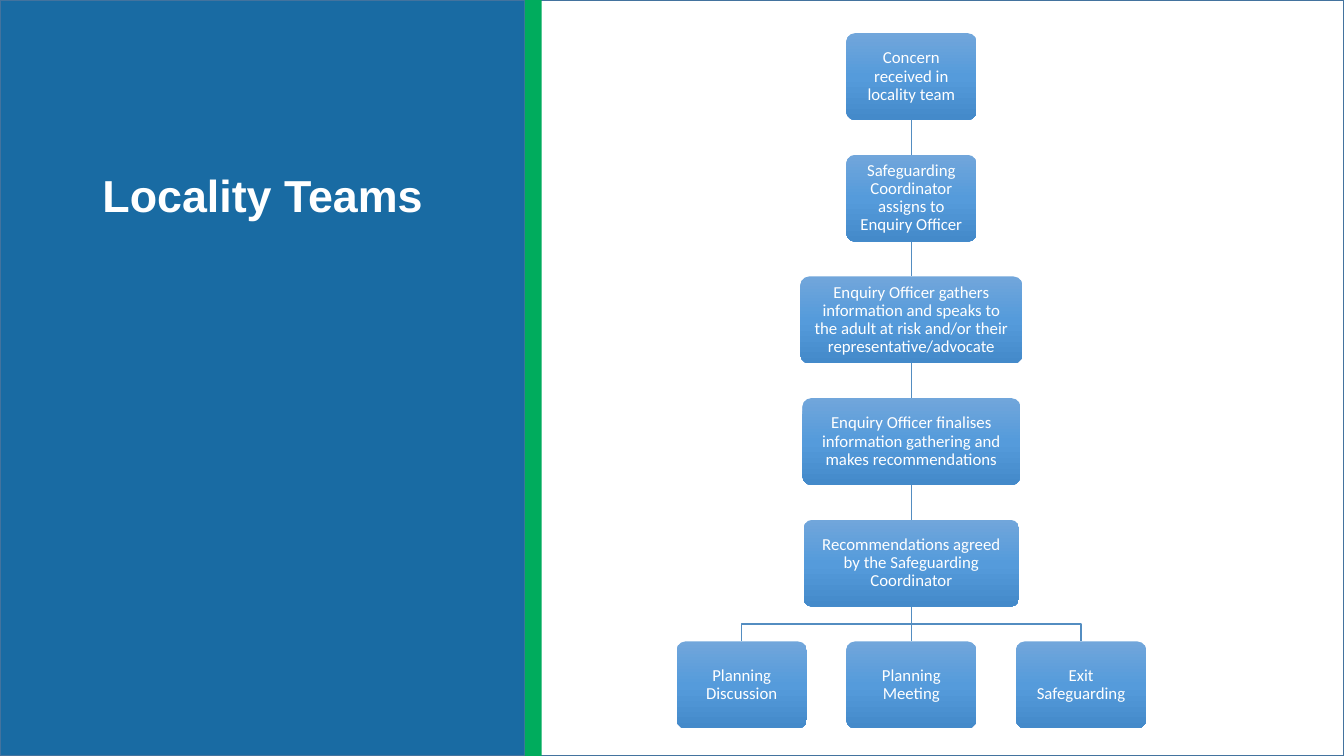
from copy import deepcopy

from lxml.etree import SubElement
from pptx import Presentation
from pptx.dml.color import RGBColor
from pptx.enum.shapes import MSO_CONNECTOR as Link, MSO_SHAPE as Shape
from pptx.enum.text import MSO_ANCHOR as Anchor, MSO_AUTO_SIZE as Fit, PP_ALIGN as Align
from pptx.oxml.ns import qn
from pptx.util import Pt

WIDE, HIGH = 960, 540
EDGE, WIRE = "43739E", "538DC1"
SHADES = [(0, "71A6DB"), (0.5, "559BDB"), (1, "448ACA")]
STEPS = [
    ("Concern received in locality team", 93),
    ("Safeguarding Coordinator assigns to Enquiry Officer", 93),
    ("Enquiry Officer gathers information and speaks to the adult at risk "
     "and/or their representative/advocate", 158.5),
    ("Enquiry Officer finalises information gathering and makes recommendations", 155.5),
    ("Recommendations agreed by the Safeguarding Coordinator", 154),
]
ENDS = ["Planning Discussion", "Planning Meeting", "Exit Safeguarding"]


def tint(code):
    """Turn a hex string into a colour."""
    return RGBColor.from_string(code)


def style(para, text, face, size, bold=False):
    """Fill a paragraph with white text."""
    para.text = text
    para.line_spacing = 0.9
    font = para.runs[0].font
    font.name, font.size, font.bold = face, Pt(size), bold
    font.color.rgb = tint("FFFFFF")


def block(slide, box, fill, edge=None):
    """Draw a plain rectangle."""
    rect = slide.shapes.add_shape(Shape.RECTANGLE, *map(Pt, box))
    rect.shadow.inherit = False
    rect.fill.solid()
    rect.fill.fore_color.rgb = tint(fill)
    if edge:
        rect.line.color.rgb = tint(edge)
        rect.line.width = Pt(1)
    else:
        rect.line.fill.background()


def side(slide, box):
    """Draw the title panel with its green band."""
    left, top, width, height = box
    block(slide, (left, top, width, height), "196BA3", EDGE)
    block(slide, (left + width, top, 12, height), "00AC5D")
    title = slide.shapes.title
    title.left, title.top = Pt(left + 66), Pt(top + 36)
    title.width, title.height = Pt(width - 66), Pt(126)
    slide.shapes._spTree.append(title._element)
    frame = title.text_frame
    frame.auto_size = Fit.NONE
    frame.vertical_anchor = Anchor.BOTTOM
    style(frame.paragraphs[0], "Locality Teams", "Arial", 32, True)
    frame.paragraphs[0].alignment = Align.LEFT


def node(slide, box, text):
    """Draw one shaded step of the flow."""
    card = slide.shapes.add_shape(Shape.ROUNDED_RECTANGLE, *map(Pt, box))
    card.adjustments[0] = 0.1
    card.shadow.inherit = False
    card.line.fill.background()
    card.fill.gradient()
    card.fill.gradient_angle = 270
    stops = card._element.spPr.find(".//" + qn("a:gsLst"))
    stops.append(deepcopy(stops[0]))
    for stop, (place, code) in zip(card.fill.gradient_stops, SHADES):
        stop.position = place
        stop.color.rgb = tint(code)
    frame = card.text_frame
    frame.word_wrap = True
    frame.vertical_anchor = Anchor.MIDDLE
    frame.margin_left = frame.margin_right = Pt(5.4)
    frame.margin_top = frame.margin_bottom = Pt(5.4)
    style(frame.paragraphs[0], text, "Calibri", 12)
    frame.paragraphs[0].alignment = Align.CENTER
    return card


def join(slide, upper, lower):
    """Link two steps that stand in one column."""
    link = slide.shapes.add_connector(Link.STRAIGHT, 0, 0, 0, 0)
    link.begin_connect(upper, 2)
    link.end_connect(lower, 0)
    link.line.color.rgb = tint(WIRE)
    link.line.width = Pt(1)
    SubElement(link._element.spPr, qn("a:effectLst"))


def branch(slide, start, end):
    """Draw a bent line from a step down to an end."""
    (x, y), (far, low) = start, end
    mid = (y + low) / 2
    form = slide.shapes.build_freeform(Pt(x), Pt(y))
    turns = [(x, mid), (far, mid), (far, low)]
    form.add_line_segments([(Pt(a), Pt(b)) for a, b in turns], close=False)
    bend = form.convert_to_shape()
    bend.shadow.inherit = False
    bend.fill.background()
    bend.line.color.rgb = tint(WIRE)
    bend.line.width = Pt(1)


def flow(slide, box):
    """Draw the flow chart centred in its white area."""
    left, top, width, height = box
    block(slide, box, "FFFFFF", EDGE)
    mid, first = left + width / 2 - 21, top + 23.7
    tall, pitch, gap = 62, 86.9, 121.2
    last = None
    for row, (text, wide) in enumerate(STEPS):
        card = node(slide, (mid - wide / 2, first + row * pitch, wide, tall), text)
        if last:
            join(slide, last, card)
        last = card
    low = first + len(STEPS) * pitch
    for spot, text in enumerate(ENDS, -1):
        x = mid + spot * gap
        card = node(slide, (x - 46.5, low, 93, tall), text)
        if spot:
            branch(slide, (mid, low - pitch + tall), (x, low))
        else:
            join(slide, last, card)


def main():
    """Build and save the slide."""
    deck = Presentation()
    deck.slide_width, deck.slide_height = Pt(WIDE), Pt(HIGH)
    slide = deck.slides.add_slide(deck.slide_layouts[5])
    flow(slide, (384, 0, WIDE - 384, HIGH))
    side(slide, (0, 0, 375, HIGH))
    deck.save("out.pptx")


if __name__ == "__main__":
    main()
